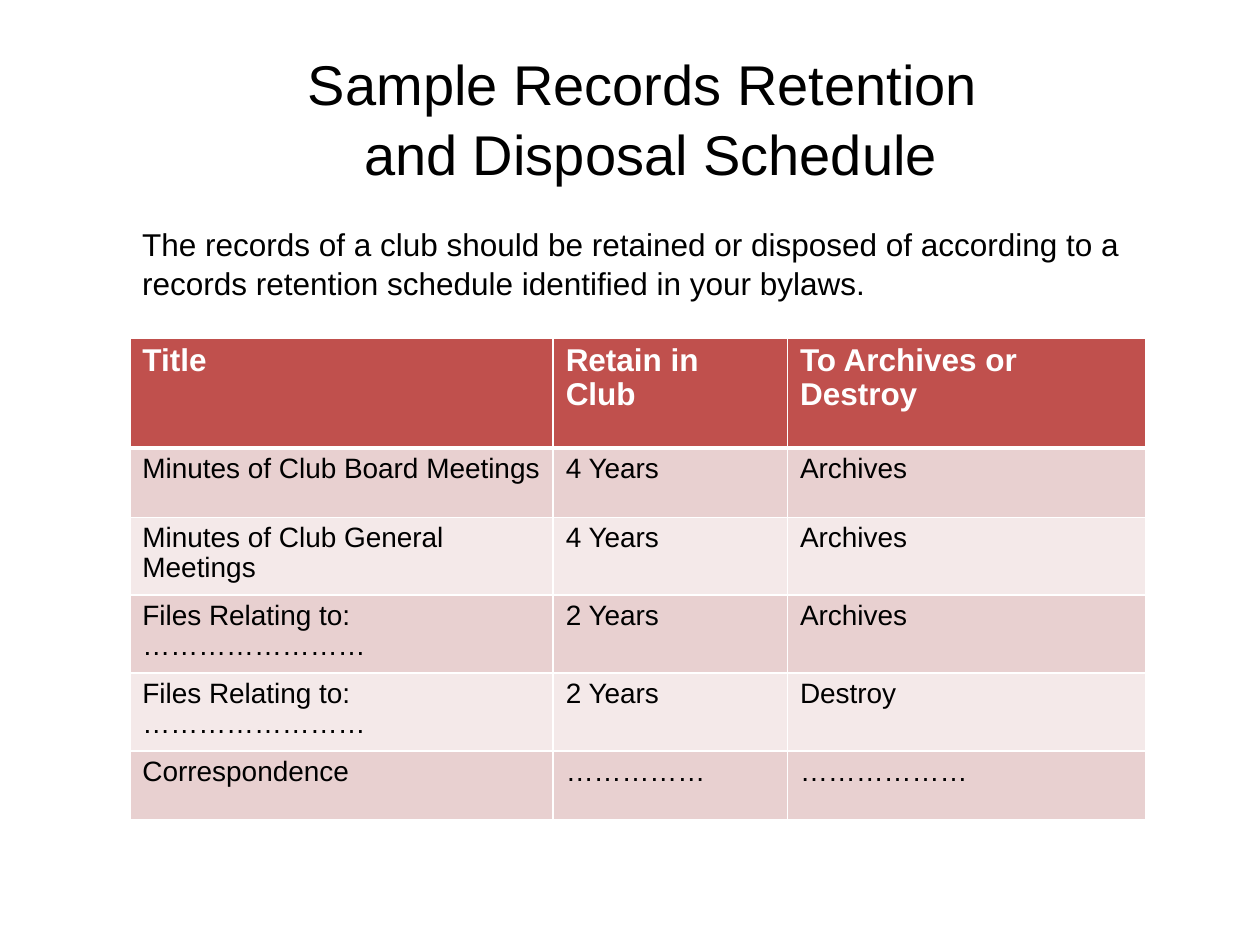
from lxml.etree import SubElement
from pptx import Presentation
from pptx.dml.color import RGBColor
from pptx.enum.text import MSO_ANCHOR, PP_ALIGN
from pptx.oxml.ns import qn
from pptx.util import Pt

BLACK = RGBColor(0x00, 0x00, 0x00)
WHITE = RGBColor(0xFF, 0xFF, 0xFF)
RED = RGBColor(0xC0, 0x50, 0x4D)
BAND_DARK = RGBColor(0xE8, 0xD0, 0xD0)
BAND_LIGHT = RGBColor(0xF4, 0xE9, 0xE9)

LEFT, WIDTH = 74.2, 580.3
COLUMN_WIDTHS = [241.9, 133.9, 204.5]
HEADER_HEIGHT, ROW_HEIGHT = 63, 39.6

SCHEDULE = [
    ("Title", "Retain in Club", "To Archives or Destroy"),
    ("Minutes of Club Board Meetings", "4 Years", "Archives"),
    ("Minutes of Club General Meetings", "4 Years", "Archives"),
    ("Files Relating to:\n……………………", "2 Years", "Archives"),
    ("Files Relating to:\n……………………", "2 Years", "Destroy"),
    ("Correspondence", "……………", "………………"),
]


class SlideBuilder:
    def __init__(self, slide, font="Arial"):
        self.s = slide
        self.font = font

    def style(self, tf, size, color, bold=False, align=PP_ALIGN.LEFT, spacing=1.0):
        for p in tf.paragraphs:
            p.alignment = align
            p.line_spacing = spacing
            for r in p.runs:
                r.font.name = self.font
                r.font.size = Pt(size)
                r.font.bold = bold
                r.font.color.rgb = color

    def text(self, text, left, top, width, height, size,
             align=PP_ALIGN.LEFT, anchor=MSO_ANCHOR.TOP):
        sp = self.s.shapes.add_textbox(Pt(left), Pt(top), Pt(width), Pt(height))
        tf = sp.text_frame
        tf.word_wrap = True
        tf.vertical_anchor = anchor
        tf.text = text
        self.style(tf, size, BLACK, align=align, spacing=1.05)

    def borders(self, cell, **widths):
        """Draw white cell borders; keys are L, R, T and B, in that order."""
        tcPr = cell._tc.get_or_add_tcPr()
        for i, (side, width) in enumerate(widths.items()):
            ln = SubElement(tcPr, qn(f"a:ln{side}"), w=str(Pt(width)))
            fill = SubElement(ln, qn("a:solidFill"))
            SubElement(fill, qn("a:srgbClr"), val=str(WHITE))
            tcPr.insert(i, ln)

    def table(self, rows, left, top, widths, header_height, row_height):
        height = header_height + row_height * (len(rows) - 1)
        table = self.s.shapes.add_table(
            len(rows), len(widths), Pt(left), Pt(top), Pt(sum(widths)), Pt(height)
        ).table
        for column, width in zip(table.columns, widths):
            column.width = Pt(width)
        for i, row in enumerate(rows):
            header = i == 0
            table.rows[i].height = Pt(header_height if header else row_height)
            band = RED if header else BAND_DARK if i % 2 else BAND_LIGHT
            for j, text in enumerate(row):
                cell = table.cell(i, j)
                cell.text_frame.text = text
                self.style(cell.text_frame, 18 if header else 16,
                           WHITE if header else BLACK, bold=header, spacing=0.97)
                cell.fill.solid()
                cell.fill.fore_color.rgb = band
                self.borders(cell, L=1, R=1, T=3 if i == 1 else 1,
                             B=3 if header else 1)


def main():
    prs = Presentation()
    prs.slide_width, prs.slide_height = Pt(720), Pt(540)
    s = SlideBuilder(prs.slides.add_slide(prs.slide_layouts[6]))
    s.text("Sample Records Retention \vand Disposal Schedule", 59.8, 21.6, 624.2, 90,
           32, PP_ALIGN.CENTER, MSO_ANCHOR.MIDDLE)
    s.table(SCHEDULE, LEFT, 193, COLUMN_WIDTHS, HEADER_HEIGHT, ROW_HEIGHT)
    s.text("The records of a club should be retained or disposed of according to a "
           "records retention schedule identified in your bylaws.",
           LEFT, 123.8, WIDTH, 51.1, 18)
    prs.save("out.pptx")


if __name__ == "__main__":
    main()
